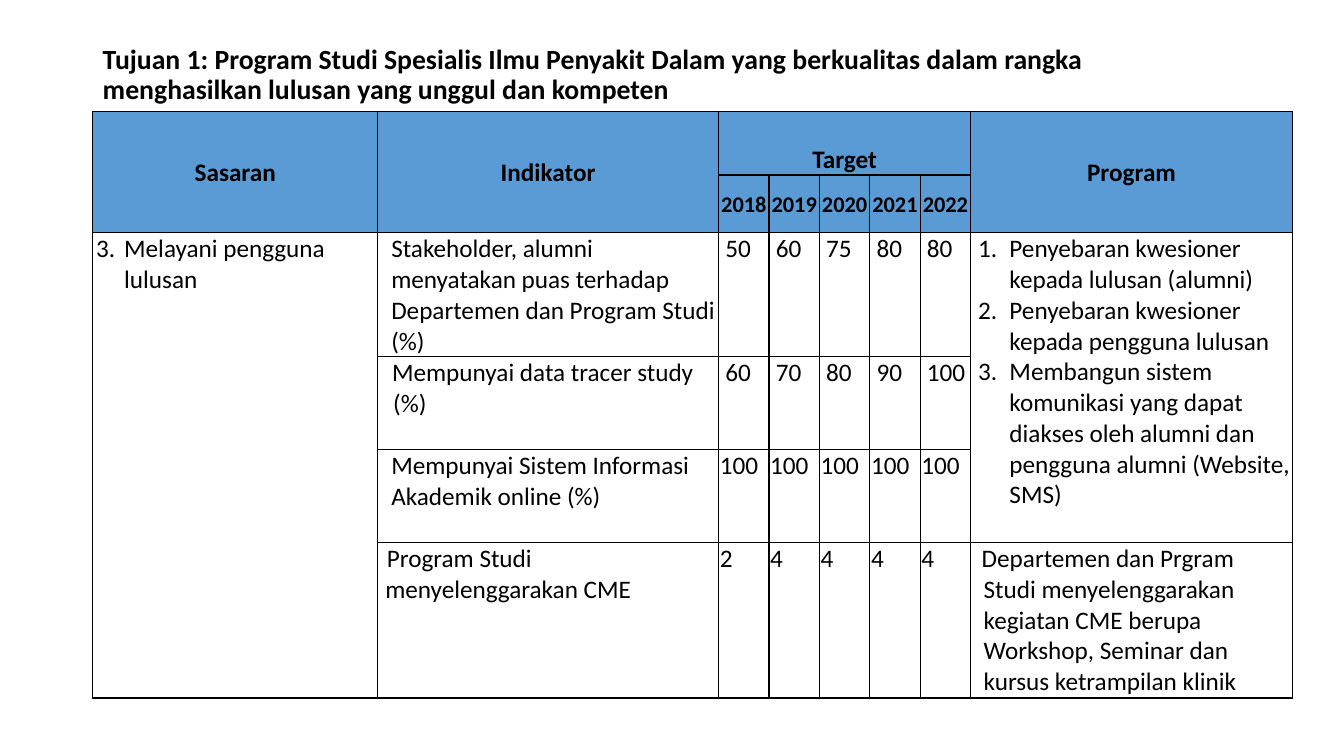
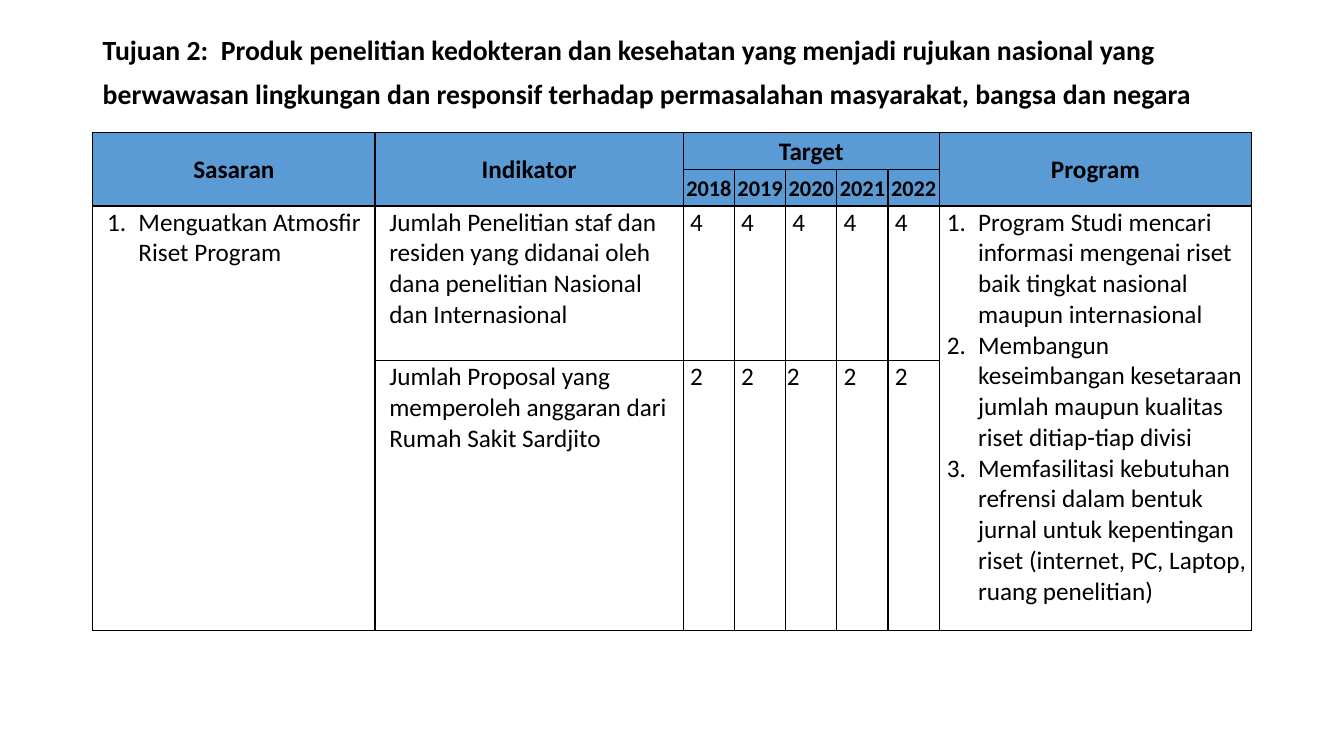
"""Build two slides of programme goals, each a title above a target table."""
from dataclasses import dataclass

from lxml.etree import SubElement as Sub
from pptx import Presentation
from pptx.dml.color import RGBColor as RGB
from pptx.enum.text import MSO_ANCHOR as ANCHOR, PP_ALIGN as ALIGN
from pptx.oxml.ns import qn
from pptx.util import Cm, Pt

COLORS = {"text": "000000", "border": "000000", "header": "5B9BD5", "body": "FFFFFF"}
FONT = "Calibri"
LEFT, WIDTH = 2.34, 29.21
YEARS = range(2018, 2023)
FIRST_YEAR = 2
PROGRAM = FIRST_YEAR + len(YEARS)
HEADER_ROWS = 2
INSET = 0.03
TARGET_INDENT = 0.14


@dataclass
class Entry:
    lines: list
    left: float = 0
    first: float = 0
    start: int = 0
    rows: int = 1


def style(p, size, bold=False):
    p.font.name = FONT
    p.font.size = Pt(size)
    p.font.bold = bold
    p.font.color.rgb = RGB.from_string(COLORS["text"])


def add_title(s, text, top, spacing):
    tf = s.shapes.add_textbox(Cm(LEFT), Cm(top), Cm(WIDTH), Cm(1.8)).text_frame
    tf.word_wrap = True
    tf.vertical_anchor = ANCHOR.MIDDLE
    p = tf.paragraphs[0]
    p.text = text
    p.line_spacing = spacing
    style(p, 19.8, True)


def set_borders(cell):
    tc_pr = cell._tc.get_or_add_tcPr()
    for i, side in enumerate(("lnL", "lnR", "lnT", "lnB")):
        ln = tc_pr.makeelement(qn(f"a:{side}"), {"w": str(Pt(1))})
        fill = Sub(ln, qn("a:solidFill"))
        Sub(fill, qn("a:srgbClr"), val=COLORS["border"])
        tc_pr.insert(i, ln)


def format_cell(cell, color):
    cell.margin_left = cell.margin_right = cell.margin_top = Cm(INSET)
    cell.margin_bottom = 0
    cell.fill.solid()
    cell.fill.fore_color.rgb = RGB.from_string(COLORS[color])
    set_borders(cell)


def fill_header(cell, text, size=18, anchor=ANCHOR.MIDDLE):
    cell.vertical_anchor = anchor
    p = cell.text_frame.paragraphs[0]
    p.text = text
    p.alignment = ALIGN.CENTER
    style(p, size, True)


def fill_entry(cell, entry):
    tf = cell.text_frame
    tf.text = "\n".join(entry.lines)
    for p in tf.paragraphs:
        p_pr = p._p.get_or_add_pPr()
        p_pr.set("marL", str(Cm(entry.left)))
        p_pr.set("indent", str(Cm(entry.first)))
        if entry.start:
            Sub(p_pr, qn("a:buFont"), typeface="+mj-lt")
            Sub(p_pr, qn("a:buAutoNum"), type="arabicPeriod", startAt=str(entry.start))
        style(p, 18)


def merge_down(table, row, col, rows):
    if rows > 1:
        table.cell(row, col).merge(table.cell(row + rows - 1, col))
    return table.cell(row, col)


def add_header(table, target_anchor):
    for col, text in ((0, "Sasaran"), (1, "Indikator"), (PROGRAM, "Program")):
        fill_header(merge_down(table, 0, col, HEADER_ROWS), text)
    table.cell(0, FIRST_YEAR).merge(table.cell(0, PROGRAM - 1))
    fill_header(table.cell(0, FIRST_YEAR), "Target", anchor=target_anchor)
    for col, year in enumerate(YEARS, FIRST_YEAR):
        fill_header(table.cell(1, col), str(year), 16)


def add_goal_table(s, top, widths, heights, goal, indicators, targets, programs,
                   flush=(), target_anchor=ANCHOR.MIDDLE):
    goal_w, indicator_w, year_w, program_w = widths
    cols = [goal_w, indicator_w] + [year_w] * len(YEARS) + [program_w]
    table = s.shapes.add_table(len(heights), len(cols), Cm(LEFT), Cm(top),
                               Cm(sum(cols)), Cm(sum(heights))).table
    table.first_row = table.horz_banding = False
    for column, width in zip(table.columns, cols):
        column.width = Cm(width)
    for i, (row, height) in enumerate(zip(table.rows, heights)):
        row.height = Cm(height)
        for cell in row.cells:
            format_cell(cell, "header" if i < HEADER_ROWS else "body")
    add_header(table, target_anchor)
    fill_entry(merge_down(table, HEADER_ROWS, 0, len(indicators)), goal)
    for i, (indicator, values) in enumerate(zip(indicators, targets)):
        row = HEADER_ROWS + i
        fill_entry(table.cell(row, 1), indicator)
        for j, value in enumerate(values):
            indent = 0 if (i, j) in flush else TARGET_INDENT
            fill_entry(table.cell(row, FIRST_YEAR + j), Entry([str(value)], indent))
    row = HEADER_ROWS
    for program in programs:
        fill_entry(merge_down(table, row, PROGRAM, program.rows), program)
        row += program.rows


def add_education_goal(s):
    add_title(s, "Tujuan 1: Program Studi Spesialis Ilmu Penyakit Dalam yang berkualitas "
                 "dalam rangka menghasilkan lulusan yang unggul dan kompeten", 1, 0.9)
    add_goal_table(
        s, 2.81, (7.18, 8.59, 1.27, 8.11), (1.6, 1.45, 3.13, 2.34, 2.34, 3.92),
        Entry(["Melayani pengguna lulusan"], 0.76, -0.71, 3),
        [Entry(["Stakeholder, alumni menyatakan puas terhadap Departemen dan "
                "Program Studi (%)"], 0.31),
         Entry(["Mempunyai data tracer study (%)"], 0.36, -0.03),
         Entry(["Mempunyai Sistem Informasi Akademik online (%)"], 0.31),
         Entry(["Program Studi menyelenggarakan CME"], 0.16, 0.04)],
        [(50, 60, 75, 80, 80), (60, 70, 80, 90, 100), (100,) * 5, (2, 4, 4, 4, 4)],
        [Entry(["Penyebaran kwesioner kepada lulusan (alumni)",
                "Penyebaran kwesioner kepada pengguna lulusan",
                "Membangun sistem komunikasi yang dapat diakses oleh alumni dan "
                "pengguna alumni (Website, SMS)"], 0.95, -0.79, 1, 3),
         Entry(["Departemen dan Prgram Studi menyelenggarakan kegiatan CME berupa "
                "Workshop, Seminar dan kursus ketrampilan klinik"], 0.3, -0.05)],
        flush={(i, j) for i in (2, 3) for j in range(len(YEARS))},
        target_anchor=ANCHOR.BOTTOM)


def add_research_goal(s):
    add_title(s, "Tujuan 2:  Produk penelitian kedokteran dan kesehatan yang menjadi "
                 "rujukan nasional yang berwawasan lingkungan dan responsif terhadap "
                 "permasalahan masyarakat, bangsa dan negara", 0.77, 1.33)
    add_goal_table(
        s, 3.34, (7.11, 7.77, 1.29, 7.87), (0.94, 0.91, 3.9, 6.8),
        Entry(["Menguatkan Atmosfir Riset Program"], 1.12, -0.79, 1),
        [Entry(["Jumlah Penelitian staf dan residen yang didanai oleh dana penelitian "
                "Nasional dan Internasional"], 0.33),
         Entry(["Jumlah Proposal yang memperoleh anggaran dari Rumah Sakit Sardjito"], 0.33)],
        [(4,) * 5, (2,) * 5],
        [Entry(["Program Studi mencari informasi mengenai riset baik tingkat nasional "
                "maupun internasional",
                "Membangun keseimbangan kesetaraan jumlah maupun kualitas riset "
                "ditiap-tiap divisi",
                "Memfasilitasi kebutuhan refrensi dalam bentuk jurnal untuk kepentingan "
                "riset (internet, PC, Laptop, ruang penelitian)"], 0.95, -0.79, 1, 2)],
        flush={(1, 2)})


def main():
    prs = Presentation()
    prs.slide_width, prs.slide_height = Cm(33.87), Cm(19.05)
    for build in (add_education_goal, add_research_goal):
        build(prs.slides.add_slide(prs.slide_layouts[6]))
    prs.save("out.pptx")


if __name__ == "__main__":
    main()
